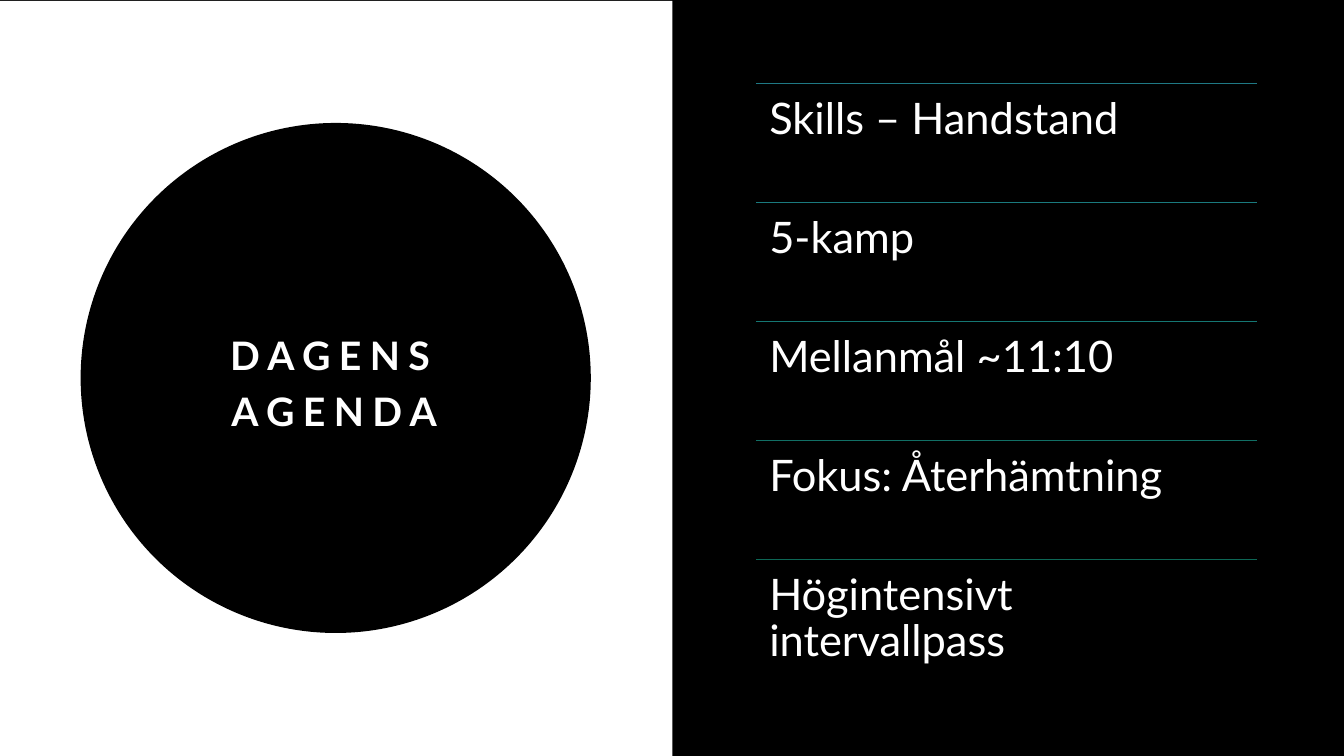
from pptx import Presentation
from pptx.dml.color import RGBColor
from pptx.enum import shapes, text
from pptx.oxml import ns
from pptx.util import Inches, Pt
from lxml import etree

COLORS = {
    "background": "000000",
    "panel": "FFFFFF",
    "circle": "000000",
    "text": "FFFFFF",
    "rule_1": "1F7985",
    "rule_2": "1A7A7E",
    "rule_3": "157773",
    "rule_4": "116F65",
    "rule_5": "0D6756",
}
FONT = "Lato"
AGENDA = [
    "Skills – Handstand",
    "5-kamp",
    "Mellanmål ~11:10",
    "Fokus: Återhämtning",
    "Högintensivt intervallpass",
]


def color(name):
    return RGBColor.from_string(COLORS[name])


def add_filled(slide, preset, box, fill):
    filled = slide.shapes.add_shape(preset, *map(Inches, box))
    filled.shadow.inherit = False
    filled.fill.solid()
    filled.fill.fore_color.rgb = color(fill)
    filled.line.fill.background()


def add_text(slide, box, wording, size, line_spacing, inset):
    """Add a wrapped, one-paragraph text box and return its frame."""
    frame = slide.shapes.add_textbox(*map(Inches, box)).text_frame
    frame.word_wrap = True
    frame.margin_left = frame.margin_right = Inches(inset)
    frame.margin_top = frame.margin_bottom = Inches(inset)
    paragraph = frame.paragraphs[0]
    paragraph.text = wording
    paragraph.line_spacing = line_spacing
    paragraph.font.name = FONT
    paragraph.font.size = Pt(size)
    paragraph.font.color.rgb = color("text")
    return frame


def add_rule(slide, left, top, width, stroke):
    rule = slide.shapes.add_connector(
        shapes.MSO_CONNECTOR.STRAIGHT,
        Inches(left), Inches(top), Inches(left + width), Inches(top))
    rule.line.color.rgb = color(stroke)
    rule.line.width = Pt(1)
    etree.SubElement(rule._element.spPr, ns.qn("a:effectLst"))


def add_title_panel(slide, left, top, width, height):
    add_filled(slide, shapes.MSO_SHAPE.RECTANGLE, (left, top, width, height), "panel")
    add_filled(slide, shapes.MSO_SHAPE.OVAL, (left + 0.8, top + 1.21, 5.06, 5.06), "circle")
    title = add_text(slide, (left + 1.32, top + 2.49, 3.99, 2.5),
                     "DAGENS AGENDA", 28, 1.2, 0.1)
    title.vertical_anchor = text.MSO_ANCHOR.MIDDLE
    heading = title.paragraphs[0]
    heading.alignment = text.PP_ALIGN.CENTER
    heading.font.bold = True
    heading.runs[0]._r.get_or_add_rPr().set("spc", "600")


def add_agenda(slide, left, top, width, height):
    """Stack the agenda items in equal rows, each under its own rule."""
    row_height = height / len(AGENDA)
    for index, item in enumerate(AGENDA):
        row_top = top + index * row_height
        add_rule(slide, left, row_top, width, f"rule_{index + 1}")
        add_text(slide, (left, row_top, width, row_height), item, 31, 0.9, 0.13)


def main():
    deck = Presentation()
    deck.slide_width, deck.slide_height = Inches(13.33), Inches(7.5)
    slide = deck.slides.add_slide(deck.slide_layouts[6])
    slide.background.fill.solid()
    slide.background.fill.fore_color.rgb = color("background")
    add_title_panel(slide, 0, 0.01, 6.67, 7.5)
    add_agenda(slide, 7.5, 0.83, 4.97, 5.9)
    deck.save("out.pptx")


if __name__ == "__main__":
    main()
